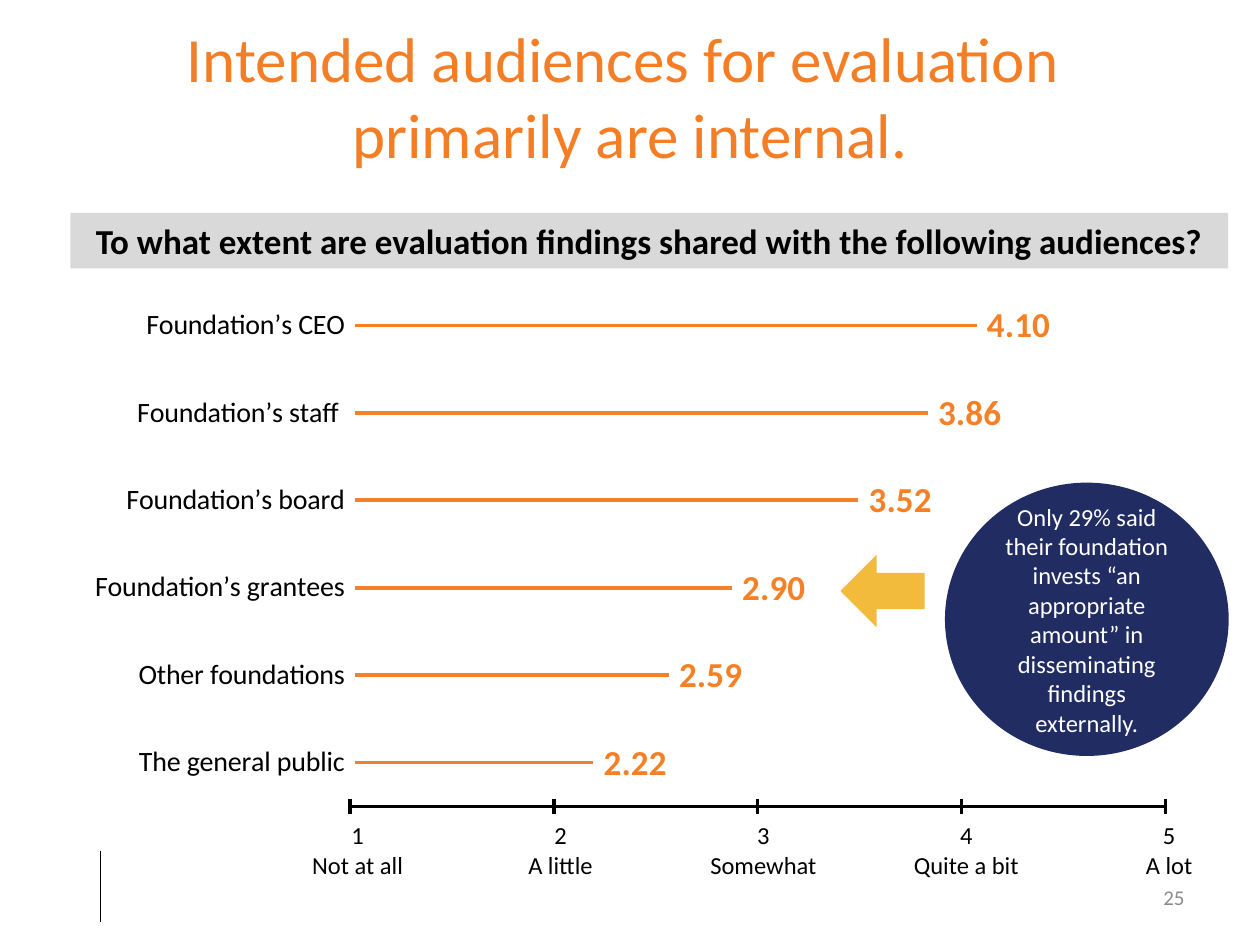
from pptx import Presentation
from pptx import util as u
from pptx.chart import data as cd
from pptx.dml import color
from pptx.enum import chart as ec, shapes, text
from pptx.oxml import ns
from lxml import etree

COLORS = {
    "title": "F57E25", "bar": "F58025", "arrow": "F2BB3C", "navy": "212C62",
    "band": "D9D9D9", "black": "000000", "white": "FFFFFF", "number": "8C8C8C",
}
FONT = "Calibri"
CENTER, RIGHT = text.PP_ALIGN.CENTER, text.PP_ALIGN.RIGHT
AUDIENCES = [
    ("The general public", 2.22),
    ("Other foundations", 2.59),
    ("Foundation’s grantees", 2.90),
    ("Foundation’s board", 3.52),
    ("Foundation’s staff ", 3.86),
    ("Foundation’s CEO", 4.10),
]
SCALE = [("Not at all", 2.36), ("A little", 1.85), ("Somewhat", 2.67),
         ("Quite a bit", 2.64), ("A lot", 1.47)]


def rgb(name):
    return color.RGBColor.from_string(COLORS[name])


def style_font(font, size, name, bold=False):
    font.name, font.size, font.bold = FONT, u.Pt(size), bold
    font.color.rgb = rgb(name)


def write(tf, content, size=14, name="black", bold=False, align=CENTER,
          anchor=text.MSO_ANCHOR.MIDDLE, wrap=True):
    tf.word_wrap = wrap
    tf.vertical_anchor = anchor
    tf.text = content
    for p in tf.paragraphs:
        p.alignment = align
        for r in p.runs:
            style_font(r.font, size, name, bold)


class Deck:
    def __init__(self):
        self.prs = Presentation()
        self.prs.slide_width, self.prs.slide_height = u.Cm(25.4), u.Cm(19.05)
        self.s = self.prs.slides.add_slide(self.prs.slide_layouts[5])

    def title(self, content, x, y, w, h):
        sp = self.s.shapes.title
        sp.left, sp.top, sp.width, sp.height = map(u.Cm, (x, y, w, h))
        write(sp.text_frame, content, 36, "title")

    def box(self, content, x, y, w, h, **fmt):
        sp = self.s.shapes.add_textbox(*map(u.Cm, (x, y, w, h)))
        write(sp.text_frame, content, **fmt)

    def shape(self, kind, fill, x, y, w, h, content="", **fmt):
        sp = self.s.shapes.add_shape(kind, *map(u.Cm, (x, y, w, h)))
        sp.shadow.inherit = False
        sp.fill.solid()
        sp.fill.fore_color.rgb = rgb(fill)
        sp.line.fill.background()
        if content:
            write(sp.text_frame, content, **fmt)

    def line(self, x1, y1, x2, y2, width=0.5):
        ln = self.s.shapes.add_connector(
            shapes.MSO_CONNECTOR.STRAIGHT, *map(u.Cm, (x1, y1, x2, y2)))
        ln.line.color.rgb = rgb("black")
        ln.line.width = u.Pt(width)
        etree.SubElement(ln._element.spPr, ns.qn("a:effectLst"))

    def bar_chart(self, rows, x, y, w, h):
        data = cd.CategoryChartData()
        data.categories = [name for name, _ in rows]
        data.add_series("Series 1", [value for _, value in rows])
        chart = self.s.shapes.add_chart(
            ec.XL_CHART_TYPE.BAR_CLUSTERED, *map(u.Cm, (x, y, w, h)), data).chart
        chart.has_legend = chart.has_title = False
        style_font(chart.font, 10, "black")

        cat, val = chart.category_axis, chart.value_axis
        cat.major_tick_mark = ec.XL_TICK_MARK.NONE
        cat.format.line.color.rgb = rgb("white")
        cat.format.line.width = u.Pt(0.75)
        style_font(cat.tick_labels.font, 16, "black")
        val.minimum_scale, val.maximum_scale, val.major_unit = 1, 5, 1
        val.has_major_gridlines = False
        val.major_tick_mark = ec.XL_TICK_MARK.CROSS
        val.tick_label_position = ec.XL_TICK_LABEL_POSITION.NONE
        val.format.line.color.rgb = rgb("black")
        val.format.line.width = u.Pt(2)

        plot = chart.plots[0]
        plot.gap_width = 500
        plot.vary_by_categories = False
        bars = plot.series[0].format
        bars.fill.solid()
        bars.fill.fore_color.rgb = rgb("bar")
        bars.line.color.rgb = rgb("white")
        bars.line.width = u.Pt(6.25)
        plot.has_data_labels = True
        labels = plot.data_labels
        labels.show_value = True
        labels.number_format, labels.number_format_is_linked = "#,##0.00", False
        labels.position = ec.XL_LABEL_POSITION.OUTSIDE_END
        style_font(labels.font, 20, "bar", True)
        self.place_plot(chart, x=0.25, y=0.02, w=0.73, h=0.96)

    def place_plot(self, chart, **fractions):
        area = chart._chartSpace.chart.plotArea
        for old in area.findall(ns.qn("c:layout")):
            area.remove(old)
        layout = etree.Element(ns.qn("c:layout"))
        manual = etree.SubElement(layout, ns.qn("c:manualLayout"))
        settings = {"layoutTarget": "inner", "xMode": "edge", "yMode": "edge", **fractions}
        for tag, value in settings.items():
            etree.SubElement(manual, ns.qn("c:" + tag)).set("val", str(value))
        area.insert(0, layout)


def main():
    d = Deck()
    d.line(2.03, 17.15, 2.03, 18.59)
    d.title("Intended audiences for evaluation \vprimarily are internal.", 0, 0.46, 25.4, 2.92)
    d.box("25", 18.21, 17.58, 5.92, 1.02, size=12, name="number", align=RIGHT)
    d.bar_chart(AUDIENCES, 1.42, 5.46, 22.53, 11.02)
    for i, (label, width) in enumerate(SCALE):
        center = 7.21 + 4.09 * i
        d.box(f"{i + 1}\n{label}", center - width / 2, 16.41, width, 1.45,
              anchor=text.MSO_ANCHOR.TOP, wrap=False)
    kinds = shapes.MSO_SHAPE
    d.shape(kinds.LEFT_ARROW, "arrow", 16.94, 11.18, 1.7, 1.47)
    d.shape(kinds.OVAL, "navy", 19.05, 9.73, 5.72, 5.51,
            "Only 29% said their foundation invests “an appropriate amount” "
            "in disseminating findings externally.", name="white")
    d.shape(kinds.RECTANGLE, "band", 1.42, 4.29, 23.34, 1.12,
            "To what extent are evaluation findings shared with the following audiences?",
            size=20, bold=True)
    d.prs.save("out.pptx")


if __name__ == "__main__":
    main()
